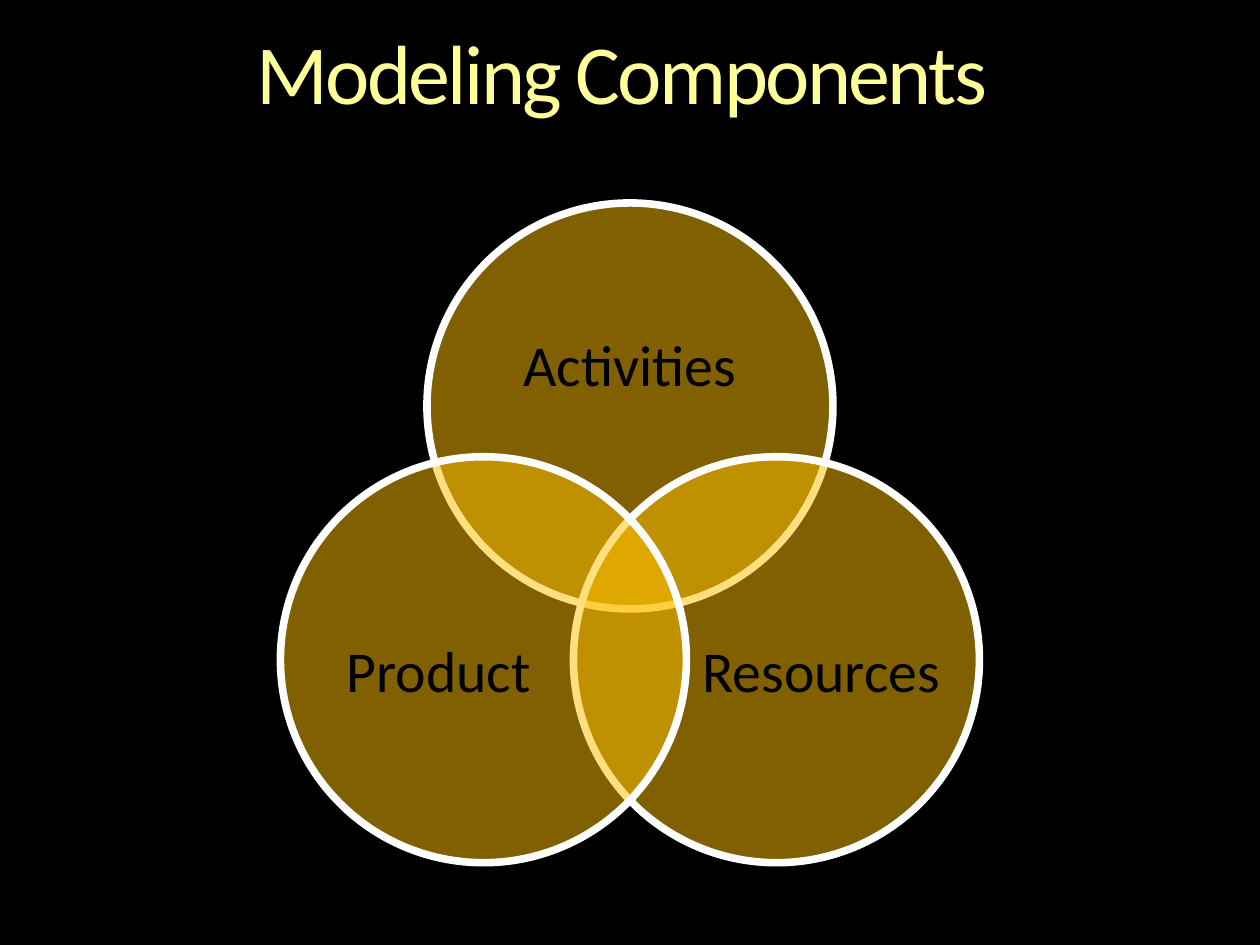
from dataclasses import dataclass
from math import cos, radians, sin

from pptx import Presentation
from pptx.dml.color import RGBColor
from pptx.enum.shapes import MSO_SHAPE as Preset
from pptx.enum.text import MSO_ANCHOR as Anchor, MSO_AUTO_SIZE as AutoSize, PP_ALIGN as Align
from pptx.oxml.ns import qn
from pptx.util import Pt


@dataclass(frozen=True)
class Theme:
    """Colours, type sizes and line settings of the slide."""
    background: RGBColor = RGBColor(0x00, 0x00, 0x00)
    title: RGBColor = RGBColor(0xFF, 0xFF, 0x99)
    label: RGBColor = RGBColor(0x00, 0x00, 0x00)
    circle: RGBColor = RGBColor(0xFF, 0xC0, 0x00)
    outline: RGBColor = RGBColor(0xFF, 0xFF, 0xFF)
    font: str = "Calibri"
    title_size: float = 48
    label_size: float = 33
    outline_width: float = 4.33
    circle_opacity: int = 50
    title_tracking: float = -1.5


@dataclass(frozen=True)
class Box:
    """A rectangle measured in points."""
    left: float
    top: float
    width: float
    height: float

    def inner(self, left, top, width, height):
        """Return the inner box at the given fractions of this one."""
        return Box(self.left + left * self.width, self.top + top * self.height,
                   width * self.width, height * self.height)

    def lengths(self):
        """Return left, top, width and height as lengths."""
        return [Pt(round(value, 2)) for value in (self.left, self.top, self.width, self.height)]


THEME = Theme()
TITLE_BOX = Box(30, 18, 660, 52.5)
VENN_BOX = Box(160.4, 116, 399.2, 377)
DIAMETER = 232
RING_RADIUS = DIAMETER * 5 / 12
CIRCLES = [
    ("Activities", -90, (0.13, 0.18, 0.74, 0.45)),
    ("Resources", 30, (0.31, 0.26, 0.6, 0.55)),
    ("Product", 150, (0.09, 0.26, 0.6, 0.55)),
]


def write_text(shape, text, size, color, anchor):
    """Write one centred line in a shape without margins."""
    frame = shape.text_frame
    frame.word_wrap = True
    frame.vertical_anchor = anchor
    frame.margin_left = frame.margin_top = frame.margin_right = frame.margin_bottom = 0
    para = frame.paragraphs[0]
    para.text = text
    para.alignment = Align.CENTER
    para.line_spacing = 0.9
    para.font.name = THEME.font
    para.font.size = Pt(size)
    para.font.color.rgb = color
    return para


def add_title(page, box):
    """Place the slide title in its placeholder."""
    title = page.shapes.title
    title.left, title.top, title.width, title.height = box.lengths()
    para = write_text(title, "Modeling Components ", THEME.title_size, THEME.title, Anchor.TOP)
    title.text_frame.auto_size = AutoSize.SHAPE_TO_FIT_TEXT
    tracking = str(int(THEME.title_tracking * 100))
    para.runs[0]._r.get_or_add_rPr().set("spc", tracking)


def add_circle(shapes, box):
    """Draw one translucent outlined circle."""
    circle = shapes.add_shape(Preset.OVAL, *box.lengths())
    circle.shadow.inherit = False
    circle.fill.solid()
    circle.fill.fore_color.rgb = THEME.circle
    color = circle._element.spPr.find(qn("a:solidFill")).find(qn("a:srgbClr"))
    alpha = color.makeelement(qn("a:alpha"), {"val": str(THEME.circle_opacity * 1000)})
    color.append(alpha)
    circle.line.color.rgb = THEME.outline
    circle.line.width = Pt(THEME.outline_width)


def add_venn(page, box):
    """Draw the labelled circles around a common centre."""
    group = page.shapes.add_group_shape()
    center_x = box.left + box.width / 2
    center_y = box.top + DIAMETER / 2 + RING_RADIUS
    for name, angle, label_fractions in CIRCLES:
        left = center_x + RING_RADIUS * cos(radians(angle)) - DIAMETER / 2
        top = center_y + RING_RADIUS * sin(radians(angle)) - DIAMETER / 2
        circle_box = Box(left, top, DIAMETER, DIAMETER)
        add_circle(group.shapes, circle_box)
        label = group.shapes.add_textbox(*circle_box.inner(*label_fractions).lengths())
        write_text(label, name, THEME.label_size, THEME.label, Anchor.MIDDLE)


def main():
    """Build the slide and save the deck."""
    deck = Presentation()
    deck.slide_width, deck.slide_height = Pt(720), Pt(540)
    page = deck.slides.add_slide(deck.slide_layouts[5])
    page.background.fill.solid()
    page.background.fill.fore_color.rgb = THEME.background
    add_title(page, TITLE_BOX)
    add_venn(page, VENN_BOX)
    deck.save("out.pptx")


if __name__ == "__main__":
    main()
